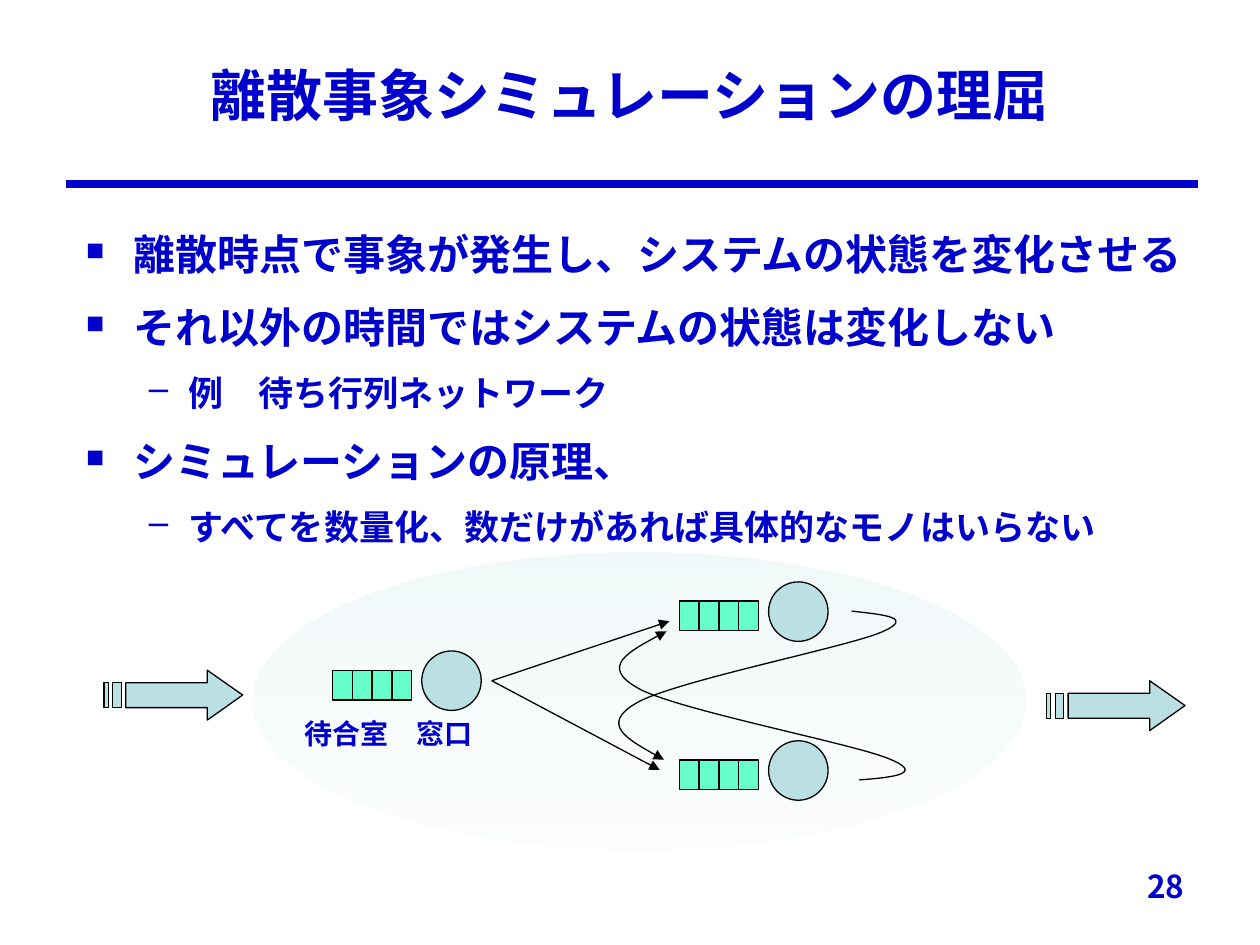
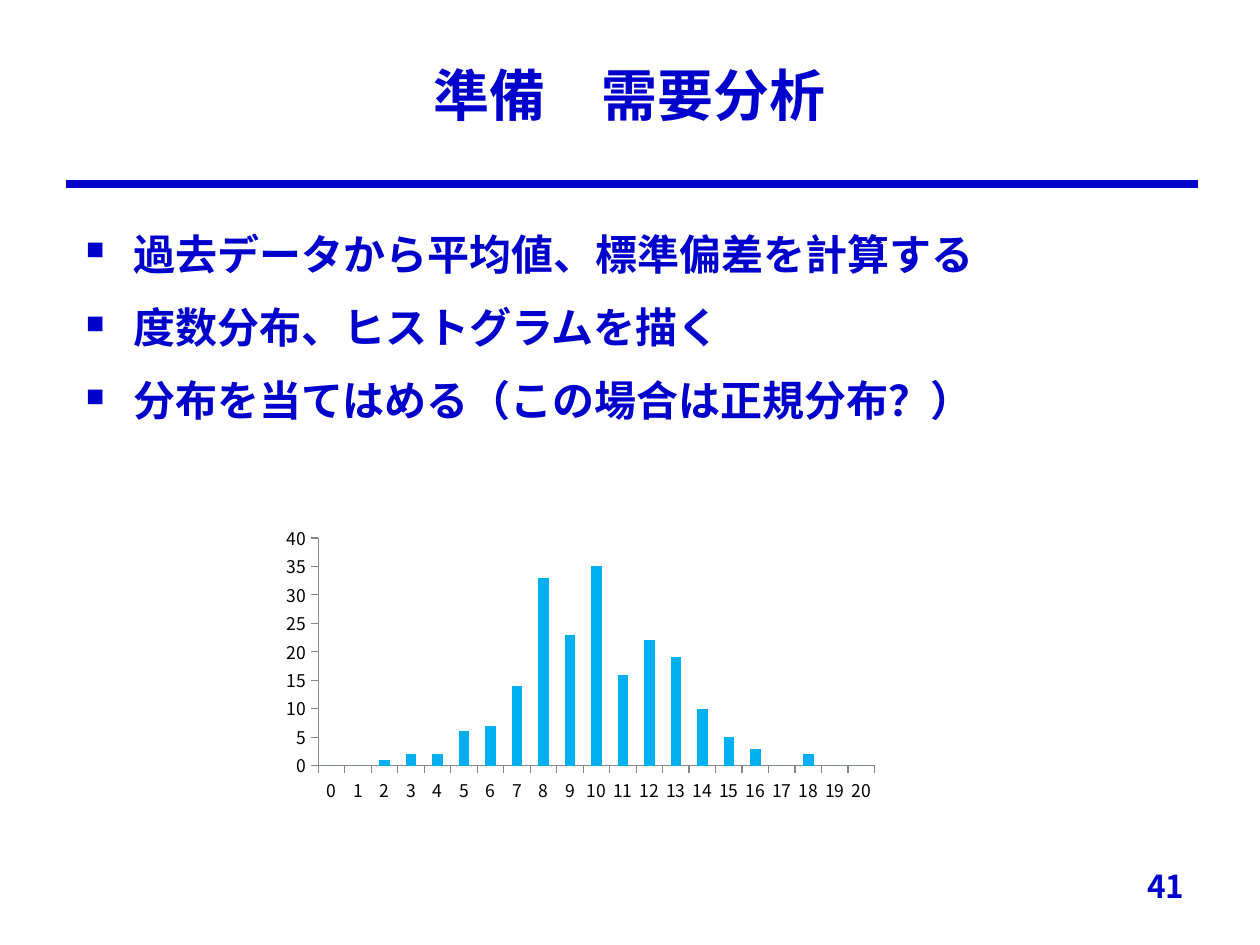
from lxml import etree
from pptx import Presentation
from pptx.chart.data import CategoryChartData
from pptx.dml.color import RGBColor
from pptx.enum.chart import XL_CHART_TYPE, XL_TICK_MARK
from pptx.enum.shapes import MSO_CONNECTOR, MSO_SHAPE
from pptx.enum.text import MSO_ANCHOR, PP_ALIGN
from pptx.oxml import parse_xml
from pptx.oxml.ns import nsdecls, qn
from pptx.util import Pt

BLUE = RGBColor(0x00, 0x00, 0xCC)
PALE_TEAL = RGBColor(0xBB, 0xE0, 0xE3)
PALEST_TEAL = RGBColor(0xEB, 0xF5, 0xF6)
MINT = RGBColor(0x66, 0xFF, 0xCC)
SKY = RGBColor(0x00, 0xB0, 0xF0)
GRAY = RGBColor(0x86, 0x86, 0x86)
BLACK = RGBColor(0x00, 0x00, 0x00)
FONT = "Noto Sans CJK JP"
LABEL_FONT = "Times New Roman"

# Bullet character, size in percent, left margin, hanging indent, text size
BULLETS = [("■", 60, 27, -27, 24), ("–", 100, 58.5, -22.5, 20)]

PAGES = [
    ("離散事象シミュレーションの理屈", "28", 358.5, [
        (0, "離散時点で事象が発生し、システムの状態を変化させる"),
        (0, "それ以外の時間ではシステムの状態は変化しない"),
        (1, "例　待ち行列ネットワーク"),
        (0, "シミュレーションの原理、"),
        (1, "すべてを数量化、数だけがあれば具体的なモノはいらない"),
    ]),
    ("準備　需要分析", "41", 160, [
        (0, "過去データから平均値、標準偏差を計算する"),
        (0, "度数分布、ヒストグラムを描く"),
        (0, "分布を当てはめる（この場合は正規分布？）"),
    ]),
]


def add_run(paragraph, text, size, font=FONT):
    run = paragraph.add_run()
    run.text = text
    run.font.size = Pt(size)
    run.font.bold = True
    run.font.name = font
    run.font.color.rgb = BLUE
    etree.SubElement(run.font._element, qn("a:ea"), typeface=FONT)


def style_line(shape, arrow=False):
    """Give a thin black line without shadow, with an arrowhead on request."""
    shape.line.color.rgb = BLACK
    shape.line.width = Pt(0.75)
    properties = shape._element.spPr
    if properties.find(qn("a:effectLst")) is None:
        etree.SubElement(properties, qn("a:effectLst"))
    if arrow:
        etree.SubElement(properties.find(qn("a:ln")), qn("a:tailEnd"), type="triangle")


prs = Presentation()
prs.slide_width, prs.slide_height = Pt(720), Pt(540)

# Shared frame: rule, page number, title and bullet list
slides = []
for title, number, body_height, bullets in PAGES:
    slide = prs.slides.add_slide(prs.slide_layouts[6])
    slides.append(slide)
    rule = slide.shapes.add_connector(
        MSO_CONNECTOR.STRAIGHT, Pt(37.5), Pt(105), Pt(684.5), Pt(105))
    style_line(rule)
    rule.line.color.rgb = BLUE
    rule.line.width = Pt(4.5)

    page_frame = slide.shapes.add_textbox(Pt(534), Pt(492), Pt(150), Pt(36)).text_frame
    page_frame.word_wrap = True
    page_frame.paragraphs[0].alignment = PP_ALIGN.RIGHT
    add_run(page_frame.paragraphs[0], number, 18)

    title_frame = slide.shapes.add_textbox(Pt(54), Pt(11), Pt(612), Pt(85.5)).text_frame
    title_frame.word_wrap = True
    title_frame.vertical_anchor = MSO_ANCHOR.MIDDLE
    title_frame.paragraphs[0].alignment = PP_ALIGN.CENTER
    add_run(title_frame.paragraphs[0], title, 32)

    body_frame = slide.shapes.add_textbox(
        Pt(42), Pt(121.5), Pt(646), Pt(body_height)).text_frame
    body_frame.word_wrap = True
    for index, (level, text) in enumerate(bullets):
        paragraph = body_frame.paragraphs[0] if index == 0 else body_frame.add_paragraph()
        mark, percent, margin, indent, size = BULLETS[level]
        paragraph.level = level
        paragraph.line_spacing = 1.2
        properties = paragraph._p.get_or_add_pPr()
        properties.set("marL", str(Pt(margin)))
        properties.set("indent", str(Pt(indent)))
        before = etree.SubElement(properties, qn("a:spcBef"))
        etree.SubElement(before, qn("a:spcPct"), val="30000")
        etree.SubElement(properties, qn("a:buSzPct"), val=str(percent * 1000))
        etree.SubElement(properties, qn("a:buChar"), char=mark)
        add_run(paragraph, text, size)

# Slide 1: queueing network
network, demand = slides
shapes = network.shapes
system = shapes.add_shape(MSO_SHAPE.OVAL, Pt(144.5), Pt(315.5), Pt(442), Pt(170))
system.shadow.inherit = False
system.line.fill.background()
system.fill.gradient()
system.fill.gradient_angle = 270
for stop, color in zip(system.fill.gradient_stops, (PALE_TEAL, PALEST_TEAL)):
    stop.color.rgb = color
for color_element in system._element.spPr.iter(qn("a:srgbClr")):
    etree.SubElement(color_element, qn("a:alpha"), val="20000")

CELL_WIDTH, CELL_HEIGHT, SERVER_SIZE = 11.33, 17, 34
for queue_left, queue_top in [(190, 383), (388.2, 343.5), (388.2, 434.3)]:
    parts = [(MSO_SHAPE.OVAL, queue_left + 51, queue_top - 11, SERVER_SIZE, SERVER_SIZE,
              PALE_TEAL)]
    parts += [(MSO_SHAPE.RECTANGLE, queue_left + cell * CELL_WIDTH, queue_top,
               CELL_WIDTH, CELL_HEIGHT, MINT) for cell in range(4)]
    for preset, left, top, width, height, color in parts:
        part = shapes.add_shape(preset, Pt(left), Pt(top), Pt(width), Pt(height))
        part.shadow.inherit = False
        part.fill.solid()
        part.fill.fore_color.rgb = color
        style_line(part)

label_frame = shapes.add_textbox(Pt(167), Pt(406), Pt(142), Pt(27)).text_frame
label_frame.word_wrap = True
add_run(label_frame.paragraphs[0], "待合室　窓口", 16, LABEL_FONT)

for end_x, end_y in [(382.5, 355), (377, 440)]:
    branch = shapes.add_connector(
        MSO_CONNECTOR.STRAIGHT, Pt(281), Pt(389), Pt(end_x), Pt(end_y))
    style_line(branch, arrow=True)

# Feedback curves: a start point, then three points for each cubic segment
FEEDBACKS = [
    [(6.76, 4.85), (7.02, 4.88), (7.27, 4.9), (6.99, 5.02), (6.7, 5.14),
     (5.34, 5.41), (5.05, 5.58), (4.76, 5.75), (5.02, 5.89), (5.27, 6.03)],
    [(6.82, 6.19), (7.09, 6.17), (7.35, 6.14), (7.05, 6.02), (6.76, 5.9),
     (5.35, 5.63), (5.06, 5.46), (4.76, 5.29), (5.03, 5.15), (5.29, 5.01)],
]
for feedback in FEEDBACKS:
    points = [(Pt(72 * x), Pt(72 * y)) for x, y in feedback]
    builder = shapes.build_freeform(*points[0], scale=1.0)
    builder.add_line_segments(points[1:], close=False)
    curve = builder.convert_to_shape()
    outline = next(curve._element.iter(qn("a:path")))
    segments = outline.findall(qn("a:lnTo"))
    for first in range(0, len(segments), 3):
        cubic = etree.SubElement(outline, qn("a:cubicBezTo"))
        for segment in segments[first:first + 3]:
            cubic.append(segment[0])
            outline.remove(segment)
    curve.shadow.inherit = False
    curve.fill.background()
    style_line(curve, arrow=True)

# Striped arrows for arrivals and departures
STRIPED_ARROW = [
    [(59, 0), (59, 7.2), (12.4, 7.2), (12.4, 21.4), (59, 21.4), (59, 28.5), (79.2, 14.2)],
    [(5, 7.2), (5, 21.4), (9.9, 21.4), (9.9, 7.2)],
    [(0, 7.2), (0, 21.4), (2.5, 21.4), (2.5, 7.2)],
]
for arrow_left, arrow_top in [(59.5, 383), (598, 389)]:
    builder = None
    for contour in STRIPED_ARROW:
        points = [(Pt(arrow_left + x), Pt(arrow_top + y)) for x, y in contour]
        if builder is None:
            builder = shapes.build_freeform(*points[0], scale=1.0)
        else:
            builder.move_to(*points[0])
        builder.add_line_segments(points[1:], close=True)
    flow = builder.convert_to_shape()
    flow.shadow.inherit = False
    flow.fill.solid()
    flow.fill.fore_color.rgb = PALE_TEAL
    style_line(flow)

# Slide 2: demand histogram
FREQUENCIES = [0, 0, 1, 2, 2, 6, 7, 14, 33, 23, 35, 16, 22, 19, 10, 5, 3, 0, 2, 0, 0]
histogram_data = CategoryChartData()
histogram_data.categories = [str(value) for value in range(len(FREQUENCIES))]
histogram_data.add_series("Series 1", FREQUENCIES)
histogram = demand.shapes.add_chart(
    XL_CHART_TYPE.COLUMN_CLUSTERED, Pt(150.5), Pt(292.5), Pt(392.5), Pt(186),
    histogram_data).chart
histogram.has_legend = False
histogram.has_title = False
histogram.font.name = FONT
histogram.font.size = Pt(10)
histogram.font.color.rgb = BLACK
bars = histogram.plots[0]
bars.gap_width = 150
bars.vary_by_categories = False
bars.series[0].format.fill.solid()
bars.series[0].format.fill.fore_color.rgb = SKY
for axis in (histogram.category_axis, histogram.value_axis):
    axis.has_major_gridlines = False
    axis.major_tick_mark = XL_TICK_MARK.OUTSIDE
    axis.minor_tick_mark = XL_TICK_MARK.NONE
    axis.format.line.color.rgb = GRAY
    axis.format.line.width = Pt(0.75)
histogram.value_axis.minimum_scale = 0
histogram.value_axis.maximum_scale = 40
histogram.value_axis.major_unit = 5

plot_area = next(histogram.element.iter(qn("c:plotArea")))
for automatic in plot_area.findall(qn("c:layout")):
    plot_area.remove(automatic)
plot_area.insert(0, parse_xml(
    f'<c:layout {nsdecls("c")}><c:manualLayout><c:layoutTarget val="inner"/>'
    '<c:xMode val="edge"/><c:yMode val="edge"/><c:x val="0.08"/><c:y val="0.08"/>'
    '<c:w val="0.81"/><c:h val="0.7"/></c:manualLayout></c:layout>'))

prs.save("out.pptx")
